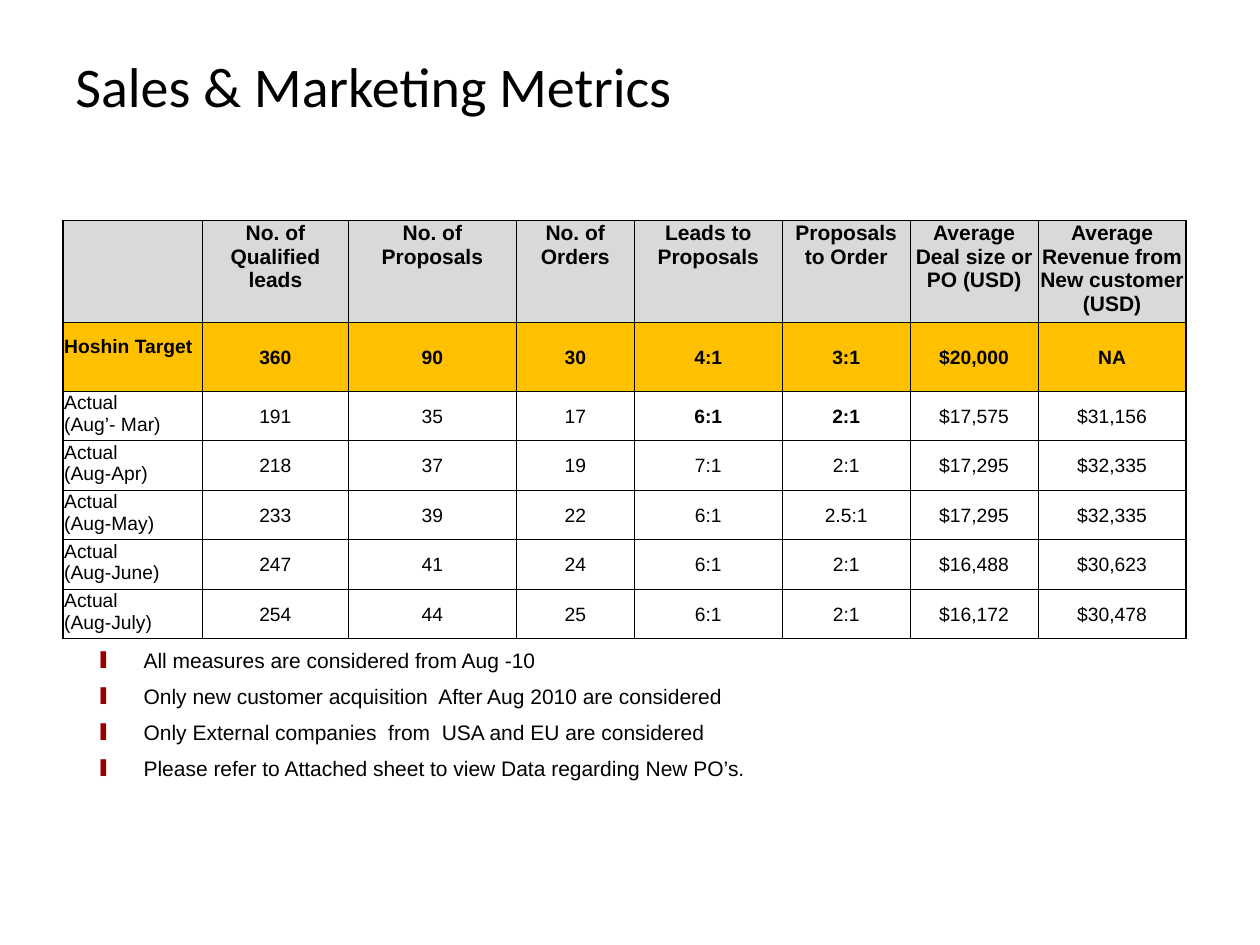
from dataclasses import dataclass

from lxml import etree
from pptx import Presentation, util as u
from pptx.dml.color import RGBColor
from pptx.enum import text as t
from pptx.oxml import ns

Pt = u.Pt
BLACK = RGBColor(0x00, 0x00, 0x00)
GREY = RGBColor(0xD9, 0xD9, 0xD9)
GOLD = RGBColor(0xFF, 0xC0, 0x00)
RED = RGBColor(0x99, 0x00, 0x00)
WIDTHS = [79.7, 83.4, 96, 67.4, 84.6, 73.1, 73.1, 84.6]


@dataclass
class Row:
    cells: list[str]
    high: float = 28.3
    fill: RGBColor | None = None
    size: float = 11
    bold: tuple[int, ...] = ()
    top: tuple[int, ...] = (0,)  # columns set at the top of the cell
    base: float = 0.1  # bottom margin of the label


ALL = tuple(range(len(WIDTHS)))
ROWS = [
    Row(["", "No. of Qualified leads", "No. of Proposals", "No. of Orders",
         "Leads to Proposals", "Proposals to Order",
         "Average\nDeal size or PO (USD)",
         "Average\nRevenue from New customer\n(USD)"],
        high=55.7, fill=GREY, size=12, bold=ALL, top=ALL),
    Row(["Hoshin Target", "360", "90", "30", "4:1", "3:1", "$20,000", "NA"],
        high=39.2, fill=GOLD, bold=ALL, top=(), base=12.6),
    Row(["Actual\n(Aug’- Mar)", "191", "35", "17", "6:1", "2:1",
         "$17,575", "$31,156"], bold=(4, 5)),
    Row(["Actual\n(Aug-Apr)", "218", "37", "19", "7:1", "2:1",
         "$17,295", "$32,335"]),
    Row(["Actual\n(Aug-May)", "233", "39", "22", "6:1", "2.5:1",
         "$17,295", "$32,335"]),
    Row(["Actual\n(Aug-June)", "247", "41", "24", "6:1", "2:1",
         "$16,488", "$30,623"]),
    Row(["Actual\n(Aug-July)", "254", "44", "25", "6:1", "2:1",
         "$16,172", "$30,478"]),
]
NOTES = [
    "All measures are considered from Aug -10",
    "Only new customer acquisition  After Aug 2010 are considered",
    "Only External companies  from  USA and EU are considered",
    "Please refer to Attached sheet to view Data regarding New PO’s.",
]


def add_el(root, tag: str, **attrs: str):
    return etree.SubElement(root, ns.qn(tag), attrs)


def add_run(para, words: str, size: float, face: str = "Arial",
            bold: bool = False) -> None:
    run = para.add_run()
    run.text = words
    run.font.size = Pt(size)
    run.font.name = face
    run.font.bold = bold
    run.font.color.rgb = BLACK


def get_para(frame, i: int):
    return frame.paragraphs[0] if i == 0 else frame.add_paragraph()


def add_box(slide, x: float, y: float, w: float, h: float):
    frame = slide.shapes.add_textbox(Pt(x), Pt(y), Pt(w), Pt(h)).text_frame
    frame.word_wrap = True
    return frame


def add_edge(cell, side: str, width: float) -> None:
    line = add_el(cell._tc.get_or_add_tcPr(), f"a:ln{side}", w=str(Pt(width)))
    fill = add_el(line, "a:solidFill")
    add_el(fill, "a:srgbClr", val=str(BLACK))


def fill_cell(cell, row: Row, r: int, c: int) -> None:
    # Borders: heavier on the left, top and right of the table
    outer = {"L": c == 0, "R": c == len(WIDTHS) - 1, "T": r == 0, "B": False}
    for side, edge in outer.items():
        add_edge(cell, side, 1 if edge else 0.5)
    if row.fill is None:
        cell.fill.background()
    else:
        cell.fill.solid()
        cell.fill.fore_color.rgb = row.fill

    # Text
    cell.margin_left = cell.margin_right = cell.margin_top = Pt(0.7)
    cell.margin_bottom = Pt(row.base if c == 0 else 0.1)
    anchor = t.MSO_ANCHOR
    cell.vertical_anchor = anchor.TOP if c in row.top else anchor.MIDDLE
    for i, words in enumerate(row.cells[c].split("\n")):
        para = get_para(cell.text_frame, i)
        para.alignment = t.PP_ALIGN.CENTER if c else t.PP_ALIGN.LEFT
        if words:
            add_run(para, words, row.size, bold=c in row.bold)


def add_grid(slide) -> None:
    high = sum(row.high for row in ROWS)
    grid = slide.shapes.add_table(len(ROWS), len(WIDTHS), Pt(36), Pt(126),
                                  Pt(sum(WIDTHS)), Pt(high)).table
    grid.first_row = grid.horz_banding = False
    for col, width in zip(grid.columns, WIDTHS):
        col.width = Pt(width)
    for r, row in enumerate(ROWS):
        grid.rows[r].height = Pt(row.high)
        for c in ALL:
            fill_cell(grid.cell(r, c), row, r, c)


def add_note(frame, i: int, words: str) -> None:
    para = get_para(frame, i)
    props = para._p.get_or_add_pPr()
    props.set("marL", str(Pt(27)))
    props.set("indent", str(Pt(-27)))
    add_el(add_el(props, "a:buClr"), "a:srgbClr", val=str(RED))
    add_el(props, "a:buSzPct", val="80000")
    add_el(props, "a:buChar", char="❚")
    para.space_before = Pt(6.2 if i else 0)
    add_run(para, words, 12)


def main() -> None:
    deck = Presentation()
    deck.slide_width, deck.slide_height = Pt(720), Pt(540)
    slide = deck.slides.add_slide(deck.slide_layouts[6])

    # Title
    frame = add_box(slide, 36, 24, 642, 54)
    frame.vertical_anchor = t.MSO_ANCHOR.MIDDLE
    frame.paragraphs[0].line_spacing = 0.9
    add_run(frame.paragraphs[0], "Sales & Marketing Metrics", 32, "Calibri")

    # Metrics table
    add_grid(slide)

    # Notes under the table
    frame = add_box(slide, 48, 366.5, 654, 87)
    for i, words in enumerate(NOTES):
        add_note(frame, i, words)

    deck.save("out.pptx")


if __name__ == "__main__":
    main()
